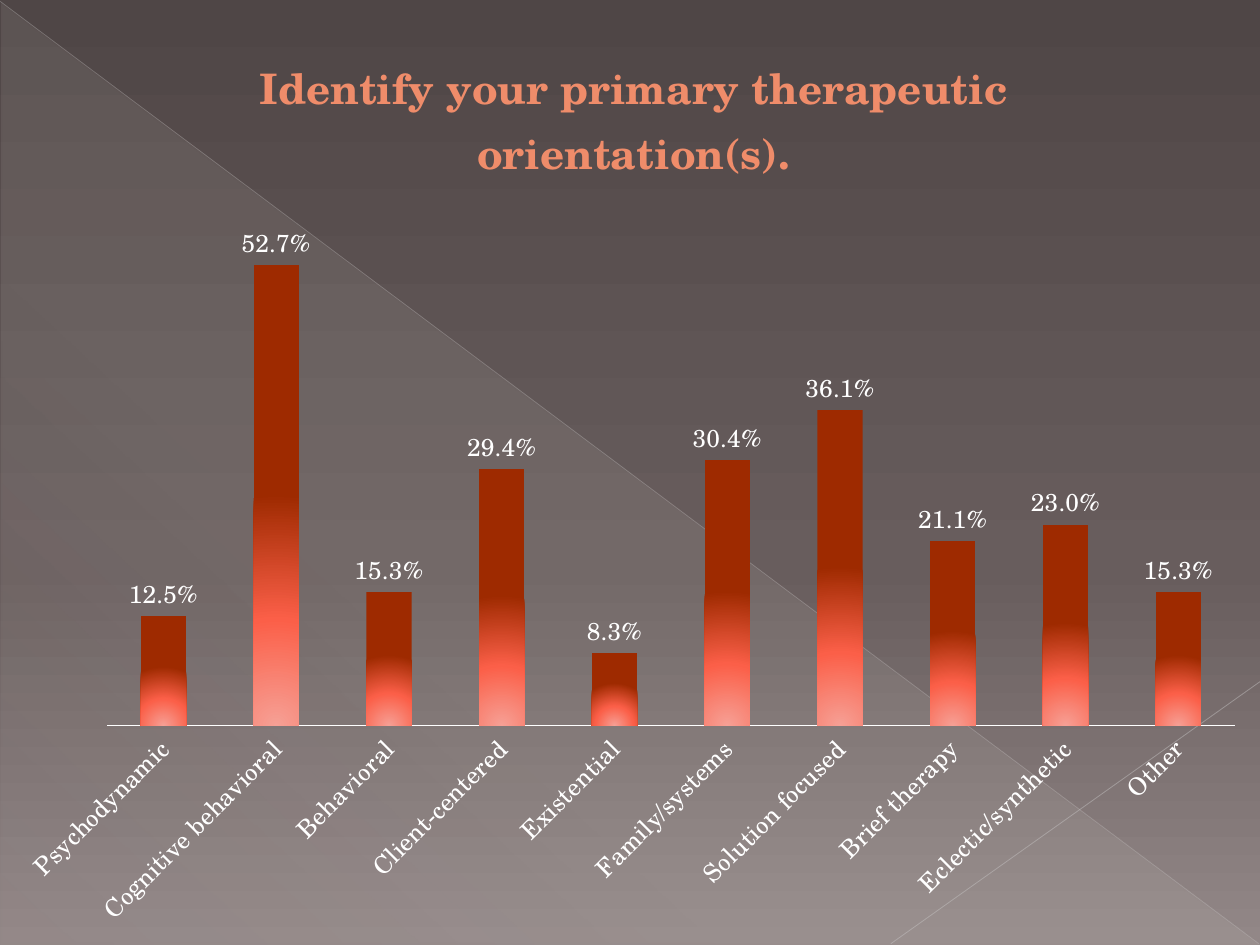
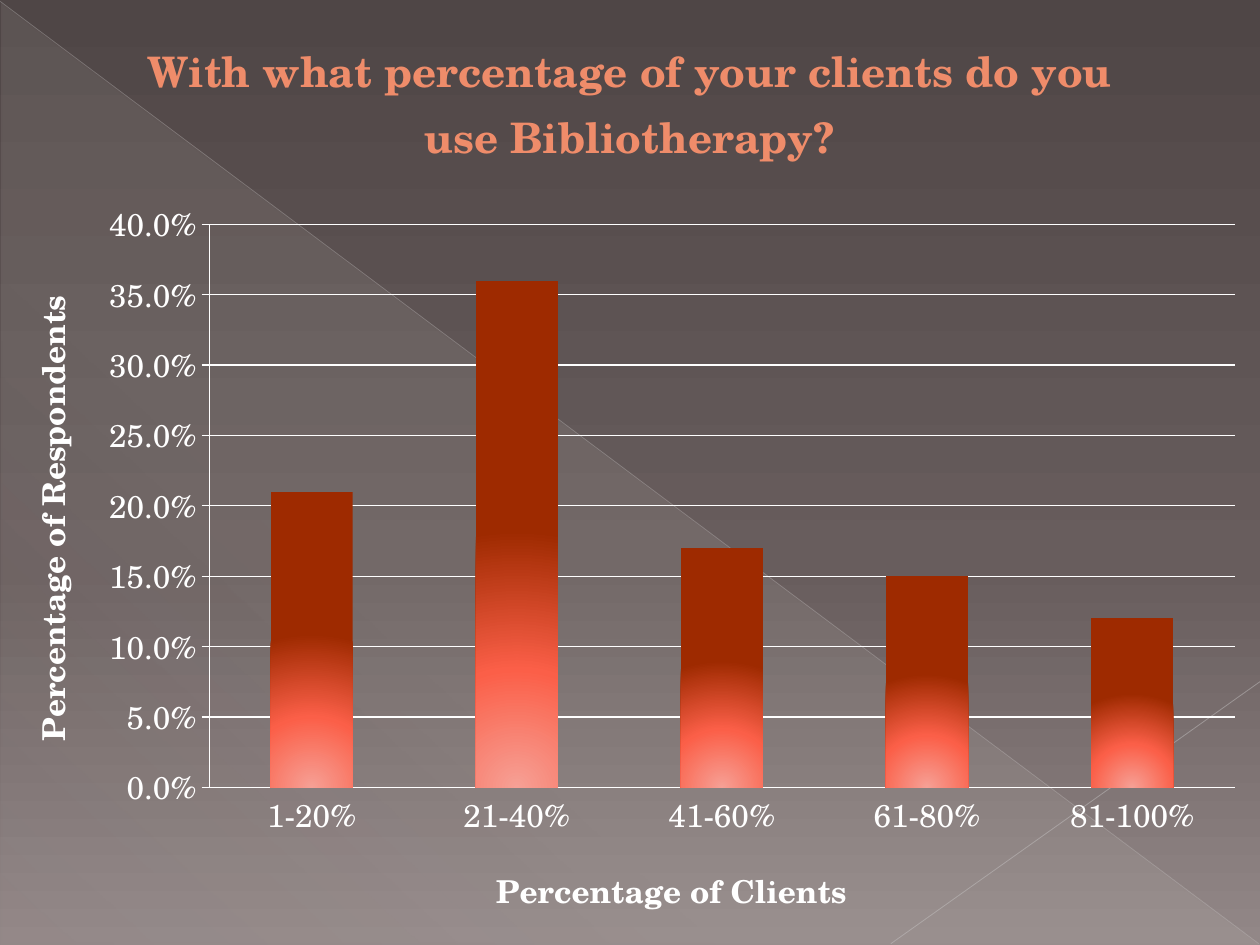
from lxml import etree
from pptx import Presentation
from pptx.chart.data import CategoryChartData
from pptx.dml.color import RGBColor
from pptx.enum import chart as charts
from pptx.enum import shapes
from pptx.oxml import ns
from pptx.util import Inches, Pt

WHITE = RGBColor(0xFF, 0xFF, 0xFF)
CORAL = RGBColor(0xEF, 0x8C, 0x6A)
DIAGONAL_GREY = RGBColor(0xC1, 0xBE, 0xBE)
CORNER_GREY = RGBColor(0xC7, 0xC5, 0xC5)
CREAM = RGBColor(0xE9, 0xE5, 0xDC)
BACKDROP = [
    (0, RGBColor(0x4F, 0x46, 0x46), 100),
    (60, RGBColor(0x68, 0x5D, 0x5D), 100),
    (100, RGBColor(0x92, 0x87, 0x87), 100),
]
SHEEN = [(0, CREAM, 10), (70, CREAM, 8), (100, CREAM, 1)]
GLOW = [
    (0, RGBColor(0xF6, 0xA0, 0x95), 100),
    (46, RGBColor(0xFB, 0x5F, 0x48), 100),
    (100, RGBColor(0x9E, 0x2A, 0x00), 100),
]
FONT = "TeX Gyre Schola"
WIDTH = Inches(10)
HEIGHT = Inches(7.5)

ORIENTATIONS = {
    "Psychodynamic": 0.125,
    "Cognitive behavioral": 0.527,
    "Behavioral": 0.153,
    "Client-centered": 0.294,
    "Existential": 0.083,
    "Family/systems": 0.304,
    "Solution focused": 0.361,
    "Brief therapy": 0.211,
    "Eclectic/synthetic": 0.23,
    "Other": 0.153,
}
CLIENT_SHARES = {
    "1-20%": 0.21,
    "21-40%": 0.36,
    "41-60%": 0.17,
    "61-80%": 0.15,
    "81-100%": 0.12,
}


def add_child(parent, tag, **attributes):
    child = etree.SubElement(parent, ns.qn(tag))
    for name, value in attributes.items():
        child.set(name, str(value))
    return child


def add_alpha(colour, percent):
    if percent < 100:
        add_child(colour, "a:alpha", val=percent * 1000)


def use_gradient(element, stops, angle=None):
    solid = next(element.iter(ns.qn("a:solidFill")))
    gradient = etree.Element(ns.qn("a:gradFill"), rotWithShape="1")
    stop_list = add_child(gradient, "a:gsLst")
    for position, colour, alpha in stops:
        stop = add_child(stop_list, "a:gs", pos=position * 1000)
        add_alpha(add_child(stop, "a:srgbClr", val=colour), alpha)
    if angle is None:
        circle = add_child(gradient, "a:path", path="circle")
        add_child(circle, "a:fillToRect", l=50000, t=100000, r=50000, b=0)
    else:
        add_child(gradient, "a:lin", ang=angle * 60000, scaled=0)
    solid.getparent().replace(solid, gradient)


def set_layout(element, lengths, inner=False):
    layout = element.find(ns.qn("c:layout"))
    if layout is None:
        layout = etree.Element(ns.qn("c:layout"))
        element.insert(0 if inner else 1, layout)
    manual = add_child(layout, "c:manualLayout")
    if inner:
        add_child(manual, "c:layoutTarget", val="inner")
    for side in ("x", "y"):
        add_child(manual, f"c:{side}Mode", val="edge")
    for side, length, whole in zip("xywh", lengths, (WIDTH, HEIGHT) * 2):
        add_child(manual, f"c:{side}", val=Inches(length) / whole)


class SurveyDeck:
    def __init__(self):
        self.deck = Presentation()
        self.deck.slide_width = WIDTH
        self.deck.slide_height = HEIGHT
        self.page = None

    def add_page(self):
        self.page = self.deck.slides.add_slide(self.deck.slide_layouts[6])
        self.page.background.fill.solid()
        use_gradient(self.page.background._cSld, BACKDROP, 90)
        self.add_triangle()
        self.add_line((0, 0.01), (9.99, 7.49), DIAGONAL_GREY, 0.39, 35)
        self.add_line((10, 5.41), (7.07, 7.49), CORNER_GREY, 0.47, 45)

    def add_triangle(self):
        triangle = self.page.shapes.add_shape(
            shapes.MSO_SHAPE.RIGHT_TRIANGLE,
            Inches(0.01), Inches(0.02), Inches(9.99), Inches(7.48))
        triangle.shadow.inherit = False
        triangle.line.fill.background()
        triangle.fill.solid()
        use_gradient(triangle._element.spPr, SHEEN, 133)

    def add_line(self, start, end, colour, width, alpha):
        line = self.page.shapes.add_connector(
            shapes.MSO_CONNECTOR.STRAIGHT, *map(Inches, start + end))
        line.line.width = Pt(width)
        line.line.color.rgb = colour
        properties = line._element.spPr
        add_alpha(next(properties.iter(ns.qn("a:srgbClr"))), alpha)
        add_child(properties, "a:effectLst")

    def style_font(self, font, size, colour=WHITE, bold=False):
        font.name = FONT
        font.size = Pt(size)
        font.color.rgb = colour
        font.bold = bold

    def style_line(self, line):
        line.color.rgb = WHITE
        line.width = Pt(0.7)

    def add_title(self, owner, words, size, colour, corner):
        owner.has_title = True
        title = owner.chart_title if hasattr(owner, "chart_title") else owner.axis_title
        title.text_frame.text = words
        self.style_font(title.text_frame.paragraphs[0].font, size, colour, True)
        set_layout(title._element, corner)

    def add_chart(self, shares, words, corner, size, plot_area, top):
        data = CategoryChartData(number_format="0.0%")
        data.categories = list(shares)
        data.add_series("Series 1", list(shares.values()))
        chart = self.page.shapes.add_chart(
            charts.XL_CHART_TYPE.COLUMN_CLUSTERED, 0, 0, WIDTH, HEIGHT, data).chart
        chart.has_legend = False
        self.style_font(chart.font, size)
        self.add_title(chart, words, 24, CORAL, corner)
        set_layout(chart._chartSpace.chart.plotArea, plot_area, inner=True)

        plot = chart.plots[0]
        plot.gap_width = 150
        plot.vary_by_categories = False
        series = plot.series[0]
        series.format.fill.solid()
        use_gradient(series._element, GLOW)

        for axis in (chart.category_axis, chart.value_axis):
            self.style_font(axis.tick_labels.font, size)
            self.style_line(axis.format.line)
            axis.has_major_gridlines = False
        chart.category_axis.major_tick_mark = charts.XL_TICK_MARK.NONE
        values = chart.value_axis
        values.minimum_scale = 0
        values.maximum_scale = top
        values.tick_labels.number_format = "0.0%"
        values.tick_labels.number_format_is_linked = False
        return chart

    def label_columns(self, chart, size):
        plot = chart.plots[0]
        plot.overlap = -25
        plot.has_data_labels = True
        labels = plot.data_labels
        labels.show_value = True
        labels.number_format = "0.0%"
        labels.number_format_is_linked = False
        labels.position = charts.XL_LABEL_POSITION.OUTSIDE_END
        self.style_font(labels.font, size)
        chart.value_axis.visible = False
        chart.category_axis._element.txPr.bodyPr.set("rot", "-2700000")

    def show_scale(self, chart, step):
        values = chart.value_axis
        values.major_unit = step
        values.major_tick_mark = charts.XL_TICK_MARK.CROSS
        values.has_major_gridlines = True
        self.style_line(values.major_gridlines.format.line)


def main():
    survey = SurveyDeck()

    survey.add_page()
    orientations = survey.add_chart(
        ORIENTATIONS, "Identify your primary therapeutic orientation(s).",
        (2, 0.33), 14, (0.85, 1.6, 8.95, 4.16), 0.6)
    survey.label_columns(orientations, 14)

    survey.add_page()
    clients = survey.add_chart(
        CLIENT_SHARES,
        "With what percentage of your clients do you use Bibliotherapy?",
        (1.11, 0.2), 18, (1.66, 1.78, 8.14, 4.47), 0.4)
    survey.show_scale(clients, 0.05)
    survey.add_title(
        clients.category_axis, "Percentage of Clients", 18, WHITE, (3.89, 6.8))
    survey.add_title(
        clients.value_axis, "Percentage of Respondents", 18, WHITE, (0.15, 2.3))
    turned = clients.value_axis.axis_title.text_frame._txBody.bodyPr
    turned.set("rot", "-5400000")
    turned.set("vert", "horz")

    survey.deck.save("out.pptx")


if __name__ == "__main__":
    main()
